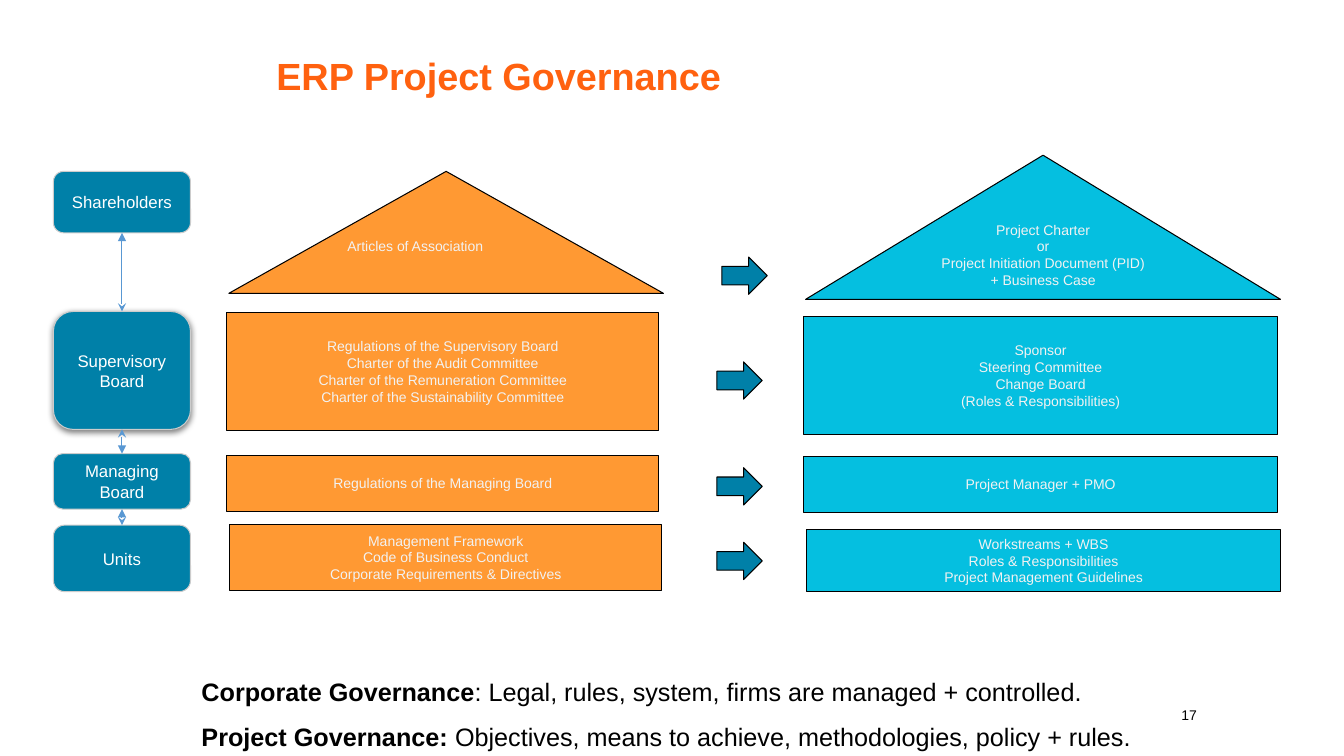
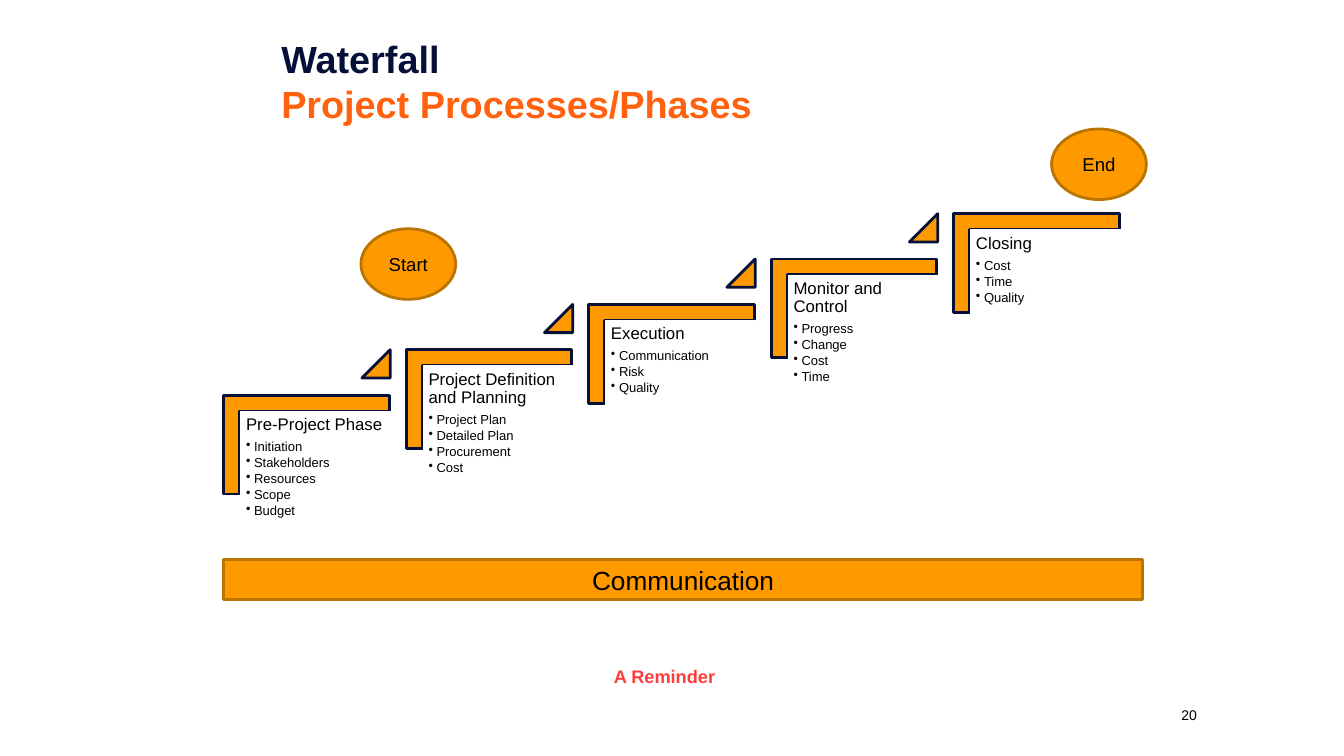
from dataclasses import dataclass
from lxml.etree import SubElement
from pptx import Presentation
from pptx.dml.color import RGBColor
from pptx.enum.shapes import MSO_CONNECTOR, MSO_SHAPE
from pptx.enum.text import MSO_ANCHOR, MSO_AUTO_SIZE, PP_ALIGN
from pptx.oxml.ns import qn
from pptx.util import Pt

PX = 9144


@dataclass(frozen=True)
class Theme:
    font: str = "Arial"
    black: RGBColor = RGBColor.from_string("000000")
    white: RGBColor = RGBColor.from_string("FFFFFF")
    pale: RGBColor = RGBColor.from_string("F2F2F2")
    grey: RGBColor = RGBColor.from_string("CCCCCC")
    navy: RGBColor = RGBColor.from_string("051039")
    heading: RGBColor = RGBColor.from_string("FF610F")
    red: RGBColor = RGBColor.from_string("FF3C3C")
    teal: RGBColor = RGBColor.from_string("0080A8")
    cyan: RGBColor = RGBColor.from_string("05BFE0")
    sky: RGBColor = RGBColor.from_string("5998D3")
    apricot: RGBColor = RGBColor.from_string("FF9933")
    amber: RGBColor = RGBColor.from_string("FF9900")
    bronze: RGBColor = RGBColor.from_string("BA7400")
    title_size: float = 27
    banner_size: float = 18.7
    summary_size: float = 18
    oval_size: float = 13.3
    reminder_size: float = 13
    label_size: float = 12
    small_size: float = 10
    bullet_size: float = 9.3
    thin: float = 0.75
    thick: float = 2


T = Theme()


def draw(slide, kind, place, fill, line, width=T.thin):
    shape = slide.shapes.add_shape(kind, *(n * PX for n in place))
    shape.shadow.inherit = False
    shape.fill.solid()
    shape.fill.fore_color.rgb = fill
    shape.line.color.rgb = line
    shape.line.width = Pt(width)
    return shape


def write(shape, lines, size, color, align=PP_ALIGN.CENTER, bold=False,
          insets=(10, 10, 10, 10), anchor=MSO_ANCHOR.MIDDLE):
    frame = shape.text_frame
    frame.word_wrap = True
    frame.auto_size = MSO_AUTO_SIZE.NONE
    frame.vertical_anchor = anchor
    (frame.margin_left, frame.margin_top,
     frame.margin_right, frame.margin_bottom) = (n * PX for n in insets)
    frame.text = "\n".join(lines)
    for paragraph in frame.paragraphs:
        paragraph.alignment = align
        paragraph.font.name = T.font
        paragraph.font.size = Pt(size)
        paragraph.font.bold = bold
        paragraph.font.color.rgb = color
    return frame.paragraphs


deck = Presentation()
deck.slide_width, deck.slide_height = 1333 * PX, 750 * PX

slides = []
for title_lines, place, inset, number in (
    (["ERP Project Governance"], (264, 27, 856, 96), 10, "17"),
    (["Waterfall", "Project Processes/Phases"], (266, 26, 565, 108), 13, "20"),
):
    slide = deck.slides.add_slide(deck.slide_layouts[5])
    title = slide.shapes.title
    title.left, title.top, title.width, title.height = (n * PX for n in place)
    write(title, title_lines, T.title_size, T.heading, PP_ALIGN.LEFT, True, (inset,) * 4)
    page = slide.shapes.add_textbox(*(n * PX for n in (1157, 692, 45, 34)))
    write(page, [number], T.small_size, T.black, insets=(10, 5, 10, 5))
    slides.append(slide)
governance, waterfall = slides
waterfall.shapes.title.text_frame.paragraphs[0].font.color.rgb = T.navy

for fill, place, lines, align, bottom in (
    (T.apricot, (227, 170, 431, 121), ["Articles of Association"], PP_ALIGN.LEFT, 33),
    (T.cyan, (799, 154, 471, 143),
     ["Project Charter", "or", "Project Initiation Document (PID)", "+ Business Case"],
     PP_ALIGN.CENTER, 17),
):
    roof = draw(governance, MSO_SHAPE.ISOSCELES_TRIANGLE, place, fill, T.black)
    write(roof, lines, T.small_size, T.pale, align, insets=(10, 0, 10, bottom))

for fill, place, lines in (
    (T.apricot, (225, 310, 428, 117),
     ["Regulations of the Supervisory Board", "Charter of the Audit Committee",
      "Charter of the Remuneration Committee", "Charter of the Sustainability Committee"]),
    (T.apricot, (225, 452, 428, 55), ["Regulations of the Managing Board"]),
    (T.apricot, (228, 520, 428, 66),
     ["Management Framework", "Code of Business Conduct",
      "Corporate Requirements & Directives"]),
    (T.cyan, (797, 314, 470, 117),
     ["Sponsor", "Steering Committee", "Change Board", "(Roles & Responsibilities)"]),
    (T.cyan, (797, 453, 470, 55), ["Project Manager + PMO"]),
    (T.cyan, (800, 525, 470, 62),
     ["Workstreams + WBS", "Roles & Responsibilities", "Project Management Guidelines"]),
):
    floor = draw(governance, MSO_SHAPE.RECTANGLE, place, fill, T.black)
    write(floor, lines, T.small_size, T.pale)

for left, top in ((716, 255), (711, 359), (711, 464), (711, 538)):
    draw(governance, MSO_SHAPE.RIGHT_ARROW, (left, top, 45, 37), T.teal, T.black)

bodies = {}
for name, top, height in (
    ("Shareholders", 170, 61),
    ("Supervisory Board", 309, 117),
    ("Managing Board", 450, 55),
    ("Units", 521, 66),
):
    body = draw(governance, MSO_SHAPE.ROUNDED_RECTANGLE, (53, top, 136, height), T.teal, T.grey)
    write(body, [name], T.label_size, T.white)
    bodies[name] = body

effects = bodies["Supervisory Board"]._element.spPr.find(qn("a:effectLst"))
shadow = SubElement(effects, qn("a:outerShdw"), blurRad=str(Pt(4.5)), dist=str(Pt(1.5)),
                    dir="5400000", algn="ctr", rotWithShape="0")
shadow_color = SubElement(shadow, qn("a:srgbClr"), val=str(T.black))
SubElement(shadow_color, qn("a:alpha"), val="50000")

for start, end in ((309, 231), (426, 450), (521, 505)):
    link = governance.shapes.add_connector(
        MSO_CONNECTOR.STRAIGHT, *(n * PX for n in (121, start, 121, end)))
    link.line.color.rgb = T.sky
    link.line.width = Pt(T.thin)
    outline = link.line._get_or_add_ln()
    SubElement(outline, qn("a:headEnd"), type="stealth")
    SubElement(outline, qn("a:tailEnd"), type="triangle")
    SubElement(link._element.spPr, qn("a:effectLst"))

definitions = (
    ("Corporate Governance", ": Legal, rules, system, firms are managed + controlled."),
    ("Project Governance:", " Objectives, means to achieve, methodologies, policy + rules."),
)
summary = governance.shapes.add_textbox(*(n * PX for n in (90, 646, 1051, 96)))
paragraphs = write(summary, [""] * len(definitions), T.summary_size, T.black,
                   PP_ALIGN.LEFT, anchor=MSO_ANCHOR.TOP)
for paragraph, (term, meaning) in zip(paragraphs, definitions):
    paragraph.line_spacing = 1.5
    paragraph._p.get_or_add_pPr().set("marL", str(100 * PX))
    for text, bold in ((term, True), (meaning, False)):
        run = paragraph.add_run()
        run.text = text
        run.font.bold = bold

phases = (
    ("Pre-Project Phase", "Initiation", "Stakeholders", "Resources", "Scope", "Budget"),
    ("Project Definition and Planning", "Project Plan", "Detailed Plan", "Procurement", "Cost"),
    ("Execution", "Communication", "Risk", "Quality"),
    ("Monitor and Control", "Progress", "Change", "Cost", "Time"),
    ("Closing", "Cost", "Time", "Quality"),
)
for step, phase in enumerate(phases):
    x, y = 181 * step, -45 * step
    corner = draw(waterfall, MSO_SHAPE.CORNER, (255 + x, 359 + y, 98, 164),
                  T.amber, T.navy, T.thick)
    corner.adjustments[0] = corner.adjustments[1] = 0.16
    corner.rotation = 90
    card = draw(waterfall, MSO_SHAPE.RECTANGLE, (239 + x, 408 + y, 148, 130), T.white, T.white)
    heading, *items = write(card, phase, T.label_size, T.black, PP_ALIGN.LEFT,
                            insets=(5, 5, 5, 5), anchor=MSO_ANCHOR.TOP)
    heading.line_spacing = 0.9
    for index, item in enumerate(items):
        item.level = 1
        item.line_spacing = 0.9
        item.space_before = Pt(1.4 if index else 4.2)
        item.font.size = Pt(T.bullet_size)
        properties = item._p.get_or_add_pPr()
        properties.set("marL", str(8 * PX))
        properties.set("indent", str(-8 * PX))
        bullet = SubElement(properties, qn("a:buChar"), char="•")
        properties.find(qn("a:defRPr")).addprevious(bullet)
    if step < len(phases) - 1:
        rise = draw(waterfall, MSO_SHAPE.ISOSCELES_TRIANGLE, (359 + x, 347 + y, 28, 28),
                    T.amber, T.navy, T.thick)
        rise.adjustments[0] = 1

for kind, place, label, size in (
    (MSO_SHAPE.OVAL, (358, 227, 94, 70), "Start", T.oval_size),
    (MSO_SHAPE.RECTANGLE, (222, 555, 911, 40), "Communication", T.banner_size),
    (MSO_SHAPE.OVAL, (1043, 128, 94, 70), "End", T.oval_size),
):
    marker = draw(waterfall, kind, place, T.amber, T.bronze, T.thick)
    write(marker, [label], size, T.black, insets=(13, 7, 13, 7))

reminder = waterfall.shapes.add_textbox(*(n * PX for n in (599, 650, 126, 42)))
write(reminder, ["A Reminder"], T.reminder_size, T.red, PP_ALIGN.LEFT, True,
      anchor=MSO_ANCHOR.TOP)

deck.save("out.pptx")
